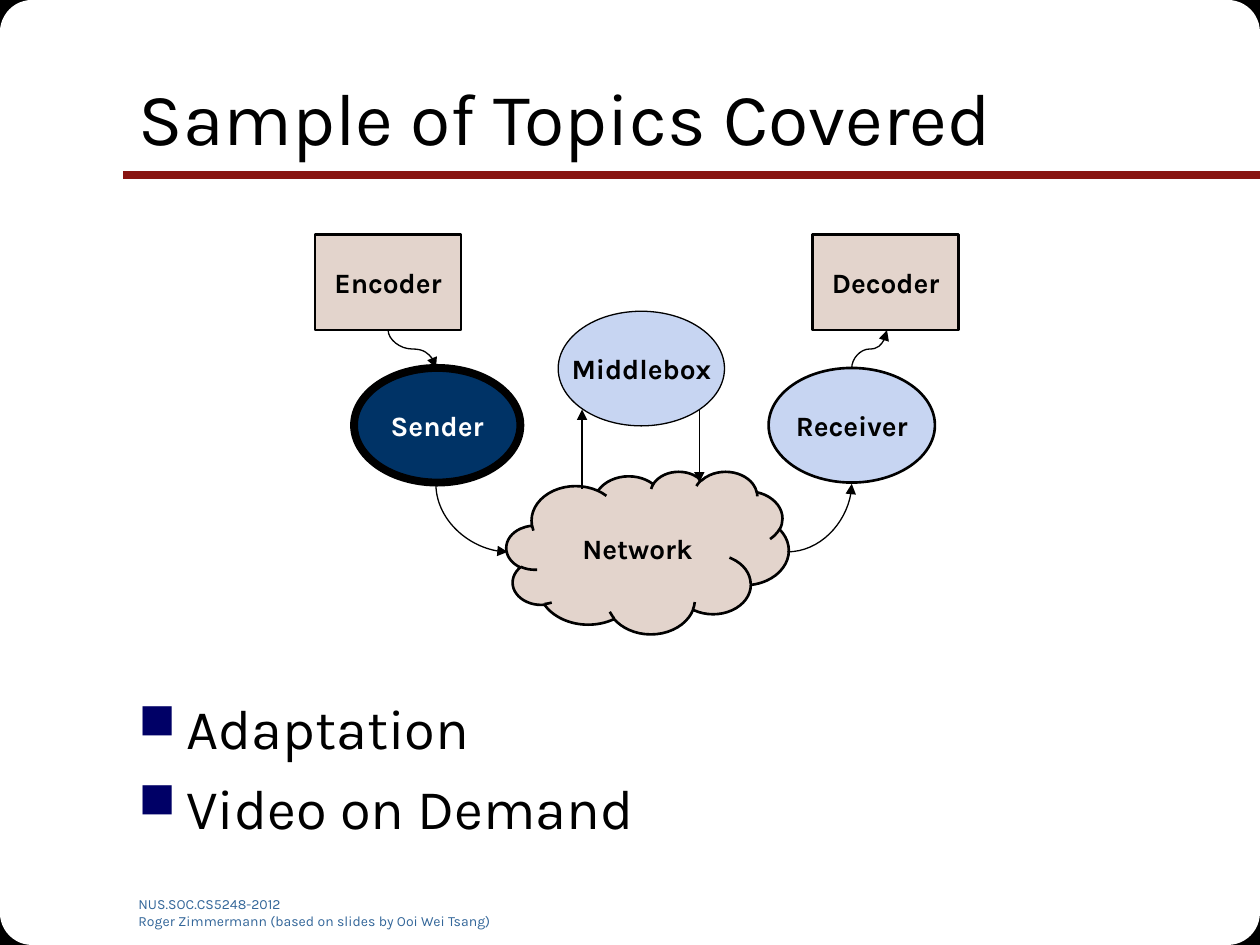
"""Build the "Sample of Topics Covered" slide with its streaming diagram."""
from itertools import product

from lxml.etree import SubElement
from pptx import Presentation
from pptx.dml.color import RGBColor
from pptx.enum.shapes import MSO_CONNECTOR as Link, MSO_SHAPE as Shape
from pptx.enum.text import MSO_ANCHOR as Anchor, MSO_AUTO_SIZE as Fit, PP_ALIGN as Align
from pptx.oxml.ns import qn
from pptx.util import Inches, Pt

THEME = {
    "font": "Karla", "black": "000000", "white": "FFFFFF", "rule": "891411",
    "footer": "336699", "bullet": "000066", "sand": "E3D4CC", "sky": "C7D5F2",
    "navy": "003366", "title_size": 42, "body_size": 32, "node_size": 16,
    "footer_size": 8, "thin": 0.75, "medium": 1.5, "thick": 4.5,
}
WIDTH, HEIGHT = 10, 7.5
TITLE = "Sample of Topics Covered"
TOPICS = ["Adaptation", "Video on Demand"]
FOOTER = ["NUS.SOC.CS5248-2012", "Roger Zimmermann (based on slides by Ooi Wei Tsang)"]
SIZES = {Shape.RECTANGLE: (1.16, 0.76), Shape.OVAL: (1.32, 0.91), Shape.CLOUD: (2.24, 1.29)}
NODES = [
    ("Network", Shape.CLOUD, 4.02, 3.74, "sand", "black", "medium"),
    ("Encoder", Shape.RECTANGLE, 2.5, 1.86, "sand", "black", "medium"),
    ("Sender", Shape.OVAL, 2.81, 2.92, "navy", "white", "thick"),
    ("Middlebox", Shape.OVAL, 4.43, 2.47, "sky", "black", "thin"),
    ("Receiver", Shape.OVAL, 6.1, 2.92, "sky", "black", "medium"),
    ("Decoder", Shape.RECTANGLE, 6.45, 1.86, "sand", "black", "medium"),
]
STRAIGHT_ARROWS = [((4.62, 3.88), (4.62, 3.25)), ((5.55, 3.25), (5.55, 3.83))]
CURVED_ARROWS = [
    ("curvedConnector3", "vertical", (3.08, 2.62), (3.46, 2.92)),
    ("curvedConnector2", "vertical", (3.46, 3.84), (4.03, 4.38)),
    ("curvedConnector2", "horizontal", (6.25, 4.38), (6.76, 3.84)),
    ("curvedConnector3", "vertical", (6.76, 2.92), (7.04, 2.62)),
]


def color(name):
    return RGBColor.from_string(THEME[name])


def add_span(para, text, size, ink, bold=False):
    span = para.add_run()
    span.text = text
    span.font.name = THEME["font"]
    span.font.size = Pt(THEME[size])
    span.font.bold = bold
    span.font.color.rgb = color(ink)


def add_block(slide, kind, left, top, width, height, fill, line=None):
    block = slide.shapes.add_shape(kind, *map(Inches, (left, top, width, height)))
    block.shadow.inherit = False
    block.fill.solid()
    block.fill.fore_color.rgb = color(fill)
    if line:
        block.line.color.rgb = color("black")
        block.line.width = Pt(THEME[line])
    else:
        block.line.fill.background()
    return block


def add_text(slide, lines, left, top, width, height, size, ink):
    box = slide.shapes.add_textbox(*map(Inches, (left, top, width, height)))
    frame = box.text_frame
    frame.word_wrap = True
    for index, line in enumerate(lines):
        para = frame.paragraphs[0] if index == 0 else frame.add_paragraph()
        add_span(para, line, size, ink)
    return frame


def add_line(slide, kind, begin, end, ink="black", width="thin", arrow=True):
    line = slide.shapes.add_connector(kind, *map(Inches, (*begin, *end)))
    line.line.color.rgb = color(ink)
    line.line.width = Pt(THEME[width])
    if arrow:
        SubElement(line.line._get_or_add_ln(), qn("a:tailEnd"), type="triangle")
    SubElement(line.element.spPr, qn("a:effectLst"))
    return line


def add_curve(slide, preset, start_direction, begin, end):
    upright = start_direction == "vertical"
    if upright:
        (x1, y1), (x2, y2) = begin, end
        middle_x, middle_y = (x1 + x2) / 2, (y1 + y2) / 2
        run, rise = (y1 - y2) / 2, (x2 - x1) / 2
        begin = middle_x - run, middle_y - rise
        end = middle_x + run, middle_y + rise
    curve = add_line(slide, Link.CURVE, begin, end)
    properties = curve.element.spPr
    properties.find(qn("a:prstGeom")).set("prst", preset)
    if upright:
        properties.find(qn("a:xfrm")).set("rot", str(270 * 60000))


def add_frame(slide):
    for kind, side, fill, line in (
        (Shape.RECTANGLE, 0.43, "black", "thin"),
        (Shape.ROUNDED_RECTANGLE, 1.53, "white", None),
    ):
        for left, top in product((0, WIDTH - side), (0, HEIGHT - side)):
            add_block(slide, kind, left, top, side, side, fill, line)
    add_line(slide, Link.STRAIGHT, (WIDTH, 1.39), (0.98, 1.39), "rule", "thick", arrow=False)


def add_title(slide):
    title = slide.shapes.title
    title.left, title.top, title.width, title.height = map(Inches, (1, 0.3, 8.5, 1.25))
    frame = title.text_frame
    frame.auto_size = Fit.NONE
    frame.vertical_anchor = Anchor.MIDDLE
    frame.paragraphs[0].alignment = Align.LEFT
    add_span(frame.paragraphs[0], TITLE, "title_size", "black")
    slide.shapes[-1].element.addnext(title.element)


def add_topics(slide):
    frame = add_text(slide, TOPICS, 1, 5.4, 8.5, 1.32, "body_size", "black")
    frame.vertical_anchor = Anchor.BOTTOM
    for para in frame.paragraphs:
        para.space_before = Pt(7)
        properties = para._p.get_or_add_pPr()
        properties.set("marL", str(Inches(0.38)))
        properties.set("indent", str(-Inches(0.38)))
        tint = SubElement(properties, qn("a:buClr"))
        SubElement(tint, qn("a:srgbClr"), val=THEME["bullet"])
        SubElement(properties, qn("a:buSzPct"), val="90000")
        SubElement(properties, qn("a:buChar"), char="■")


def add_diagram(slide):
    for label, kind, left, top, fill, ink, line in NODES:
        node = add_block(slide, kind, left, top, *SIZES[kind], fill, line)
        frame = node.text_frame
        frame.word_wrap = False
        frame.vertical_anchor = Anchor.MIDDLE
        frame.paragraphs[0].alignment = Align.CENTER
        add_span(frame.paragraphs[0], label, "node_size", ink, bold=True)
    for begin, end in STRAIGHT_ARROWS:
        add_line(slide, Link.STRAIGHT, begin, end)
    for curve in CURVED_ARROWS:
        add_curve(slide, *curve)


def main():
    deck = Presentation()
    deck.slide_width, deck.slide_height = Inches(WIDTH), Inches(HEIGHT)
    slide = deck.slides.add_slide(deck.slide_layouts[5])
    add_frame(slide)
    add_text(slide, FOOTER, 1, 7.06, 3.08, 0.28, "footer_size", "footer")
    add_title(slide)
    add_topics(slide)
    add_diagram(slide)
    deck.save("out.pptx")


if __name__ == "__main__":
    main()
